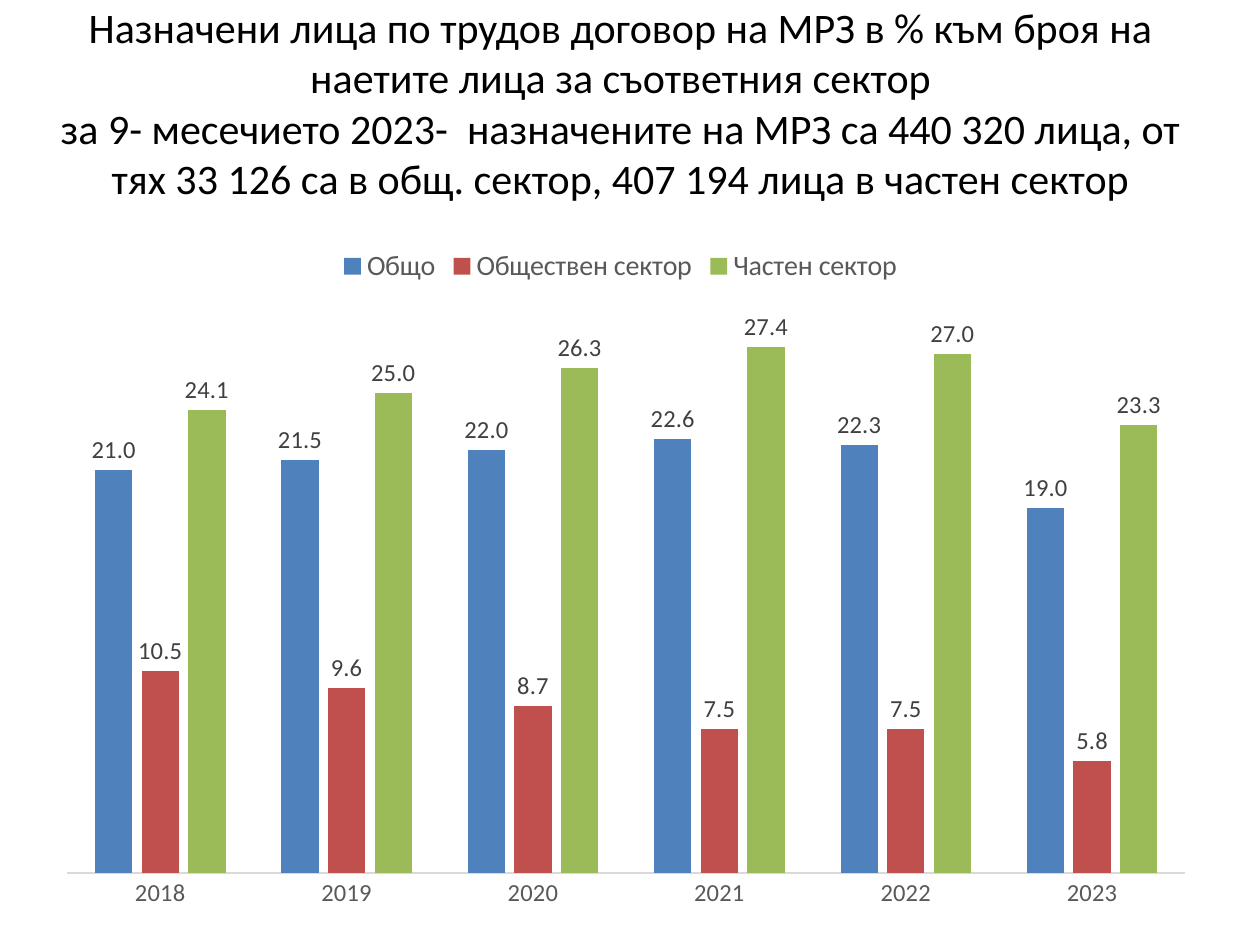
"""Build a slide charting minimum-wage employees as a share of each sector."""
from lxml.etree import SubElement
from pptx import Presentation
from pptx.chart.data import CategoryChartData
from pptx.dml.color import RGBColor
from pptx.enum.chart import XL_CHART_TYPE, XL_LABEL_POSITION, XL_LEGEND_POSITION, XL_TICK_MARK
from pptx.enum.text import MSO_ANCHOR, MSO_AUTO_SIZE, PP_ALIGN
from pptx.oxml.ns import qn
from pptx.util import Inches, Pt

BLACK = RGBColor(0x00, 0x00, 0x00)
DARK_GRAY = RGBColor(0x40, 0x40, 0x40)
GRAY = RGBColor(0x59, 0x59, 0x59)
LIGHT_GRAY = RGBColor(0xD9, 0xD9, 0xD9)
BLUE = RGBColor(0x4F, 0x81, 0xBD)
RED = RGBColor(0xC0, 0x50, 0x4D)
GREEN = RGBColor(0x9B, 0xBB, 0x59)

YEARS = ["2018", "2019", "2020", "2021", "2022", "2023"]
SECTORS = [
    ("Общо", BLUE, [21.0, 21.5, 22.0, 22.6, 22.3, 19.0]),
    ("Обществен сектор", RED, [10.5, 9.6, 8.7, 7.5, 7.5, 5.8]),
    ("Частен сектор", GREEN, [24.1, 25.0, 26.3, 27.4, 27.0, 23.3]),
]
PLOT_LAYOUT = [
    ("layoutTarget", "inner"), ("xMode", "edge"), ("yMode", "edge"),
    ("x", "0.02"), ("y", "0.09"), ("w", "0.97"), ("h", "0.83"),
]


def set_font(font, size, color):
    font.name = "Calibri"
    font.size = Pt(size)
    font.bold = False
    font.color.rgb = color


presentation = Presentation()
presentation.slide_width = Inches(10)
presentation.slide_height = Inches(7.5)
slide = presentation.slides.add_slide(presentation.slide_layouts[5])

title = slide.shapes.title
title.left, title.top = Inches(0.35), Inches(0)
title.width, title.height = Inches(9.15), Inches(1.62)
heading = title.text_frame
heading.text = (
    "Назначени лица по трудов договор на МРЗ в % към броя на наетите лица "
    "за съответния сектор\v"
    "за 9- месечието 2023-  назначените на МРЗ са 440 320 лица, "
    "от тях 33 126 са в общ. сектор, 407 194 лица в частен сектор"
)
heading.auto_size = MSO_AUTO_SIZE.NONE
heading.vertical_anchor = MSO_ANCHOR.MIDDLE
heading.paragraphs[0].alignment = PP_ALIGN.CENTER
set_font(heading.paragraphs[0].font, 24, BLACK)

shares = CategoryChartData(number_format="0.0")
shares.categories = YEARS
for name, color, values in SECTORS:
    shares.add_series(name, values)
chart = slide.shapes.add_chart(
    XL_CHART_TYPE.COLUMN_CLUSTERED,
    Inches(0.35), Inches(1.86), Inches(9.15), Inches(5.51), shares,
).chart
chart.has_title = False
set_font(chart.font, 10, BLACK)

chart.has_legend = True
chart.legend.position = XL_LEGEND_POSITION.TOP
chart.legend.include_in_layout = False
set_font(chart.legend.font, 16, GRAY)

year_axis = chart.category_axis
year_axis.major_tick_mark = XL_TICK_MARK.NONE
year_axis.minor_tick_mark = XL_TICK_MARK.NONE
year_axis.format.line.color.rgb = LIGHT_GRAY
year_axis.format.line.width = Pt(0.75)
set_font(year_axis.tick_labels.font, 14, GRAY)

share_axis = chart.value_axis
share_axis.visible = False
share_axis.has_major_gridlines = False
share_axis.minimum_scale = 0
share_axis.maximum_scale = 30

plot = chart.plots[0]
plot.gap_width = 150
plot.overlap = -25
plot.vary_by_categories = False
for series, (name, color, values) in zip(plot.series, SECTORS):
    series.format.fill.solid()
    series.format.fill.fore_color.rgb = color
    labels = series.data_labels
    labels.show_value = True
    labels.number_format = "0.0"
    labels.number_format_is_linked = False
    labels.position = XL_LABEL_POSITION.OUTSIDE_END
    set_font(labels.font, 14, DARK_GRAY)

plot_area = chart.element.find(".//" + qn("c:plotArea"))
for automatic_layout in plot_area.findall(qn("c:layout")):
    plot_area.remove(automatic_layout)
layout = SubElement(plot_area, qn("c:layout"))
plot_area.insert(0, layout)
manual_layout = SubElement(layout, qn("c:manualLayout"))
for tag, value in PLOT_LAYOUT:
    SubElement(manual_layout, qn("c:" + tag)).set("val", value)

presentation.save("out.pptx")
